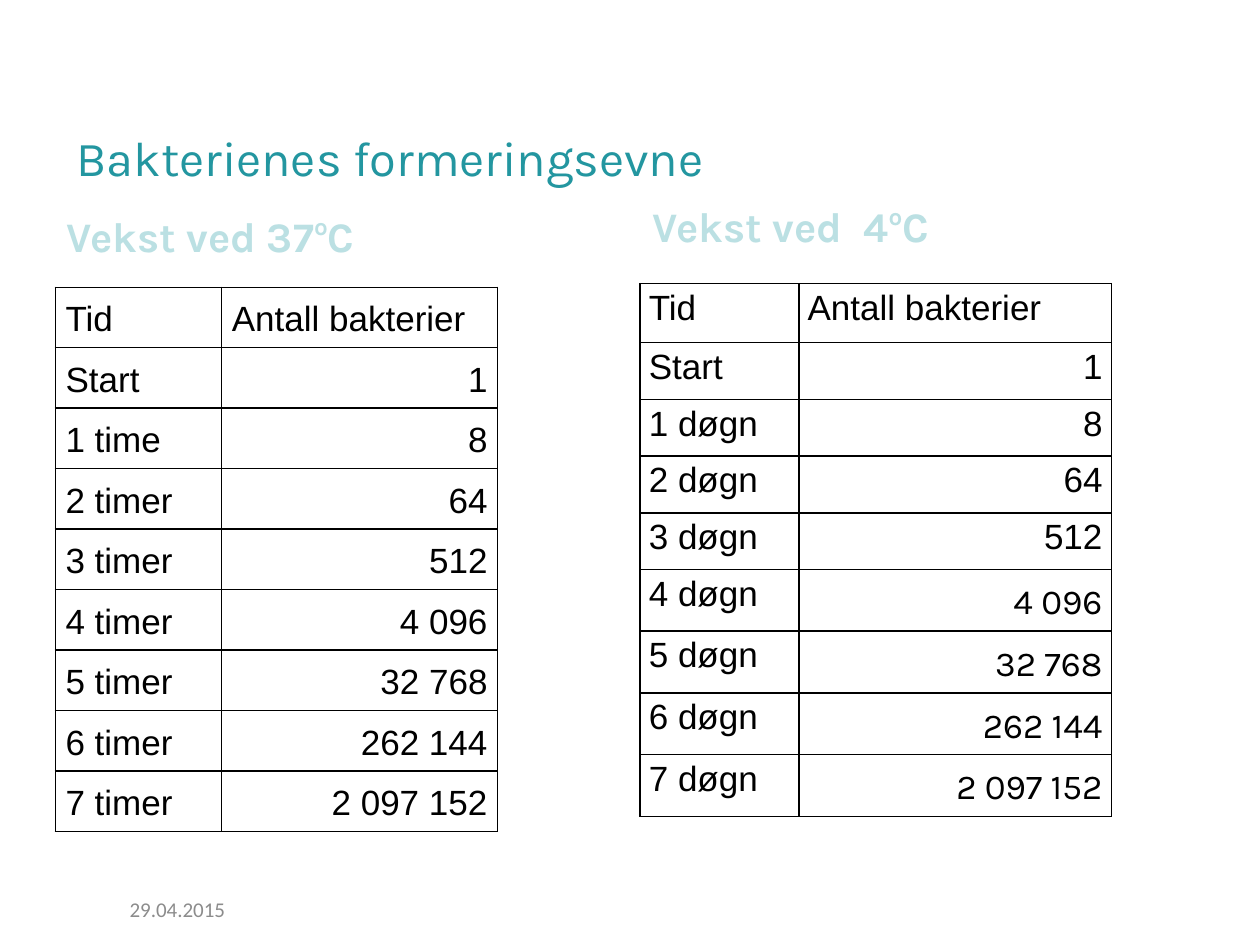
from lxml import etree
from pptx import Presentation
from pptx import util as u
from pptx.dml.color import RGBColor
from pptx.enum import text
from pptx.oxml import ns

TEAL = RGBColor(0x23, 0x96, 0xA0)
PALE = RGBColor(0xBB, 0xE0, 0xE3)
GRAY = RGBColor(0x8C, 0x8C, 0x8C)
BLACK = RGBColor(0, 0, 0)
COUNTS = ["1", "8", "64", "512", "4 096", "32 768", "262 144", "2 097 152"]


class Deck:
    head = "Karla"
    body = "Arial"
    cols = 100
    rows = 75

    def __init__(self):
        self.prs = Presentation()
        self.prs.slide_width = u.Inches(10)
        self.prs.slide_height = u.Inches(7.5)
        self.slide = self.prs.slides.add_slide(self.prs.slide_layouts[6])

    def x(self, n):
        return round(self.prs.slide_width * n / self.cols)

    def y(self, n):
        return round(self.prs.slide_height * n / self.rows)

    def font(self, run, size, face, color, bold=False):
        run.font.size = u.Pt(size)
        run.font.name = face
        run.font.color.rgb = color
        run.font.bold = bold

    def label(self, parts, box, size, face, color, anchor, bold=False, base=0.5):
        left, top, wide, high = box
        shape = self.slide.shapes.add_textbox(
            self.x(left), self.y(top), self.x(wide), self.y(high))
        frame = shape.text_frame
        frame.word_wrap = True
        frame.vertical_anchor = anchor
        frame.margin_bottom = self.y(base)
        for part in parts:
            run = frame.paragraphs[0].add_run()
            run.text = part
            self.font(run, size, face, color, bold)
        return frame.paragraphs[0]

    def title(self, words, box):
        self.label([words], box, 27.9, self.head, TEAL,
                   text.MSO_ANCHOR.BOTTOM, base=0)

    def heading(self, words, box):
        para = self.label([words, "o", "C"], box, 24, self.head, PALE,
                          text.MSO_ANCHOR.BOTTOM, bold=True)
        para.runs[1]._r.get_or_add_rPr().set("baseline", "40000")

    def date(self, words, box):
        self.label([words], box, 12, "Calibri", GRAY, text.MSO_ANCHOR.MIDDLE)

    def border(self, cell):
        props = cell._tc.get_or_add_tcPr()
        for side in ("a:lnL", "a:lnR", "a:lnT", "a:lnB"):
            line = etree.SubElement(props, ns.qn(side), w=str(u.Pt(1)))
            fill = etree.SubElement(line, ns.qn("a:solidFill"))
            etree.SubElement(fill, ns.qn("a:srgbClr"), val=str(BLACK))

    def cell(self, cell, words, inset, right, loose, face):
        self.border(cell)
        cell.fill.background()
        cell.margin_left = cell.margin_right = self.x(inset)
        cell.margin_top = cell.margin_bottom = self.y(0.4)
        cell.text_frame.text = words
        para = cell.text_frame.paragraphs[0]
        para.alignment = text.PP_ALIGN.RIGHT if right else text.PP_ALIGN.LEFT
        if loose:
            para.line_spacing = 1.2
        self.font(para.runs[0], 20, face, BLACK)

    def table(self, times, spot, wides, highs, inset, loose, alt):
        data = [("Tid", "Antall bakterier"), *zip(["Start", *times], COUNTS)]
        left, top = spot
        grid = self.slide.shapes.add_table(
            len(data), 2, self.x(left), self.y(top),
            self.x(sum(wides)), self.y(sum(highs))).table
        grid.first_row = grid.horz_banding = False
        for col, wide in zip(grid.columns, wides):
            col.width = self.x(wide)
        for r, (row, high) in enumerate(zip(data, highs)):
            grid.rows[r].height = self.y(high)
            for c, words in enumerate(row):
                late = alt and c == 1 and r > 4
                self.cell(grid.cell(r, c), words, inset, c == 1 and r > 0,
                          loose or late, self.head if late else self.body)


def main():
    deck = Deck()
    deck.title("Bakterienes formeringsevne", (5.1, 6.8, 90, 8))
    deck.heading("Vekst ved 37", (4.3, 13.9, 42.3, 7.3))
    hours = ["1 time"] + [f"{n} timer" for n in range(2, 8)]
    deck.table(hours, (4.4, 22.8), (13.2, 21.9), [4.7] * 9, 0.8, True, False)
    deck.heading("Vekst ved  4", (50.8, 13.1, 42.5, 7.3))
    days = [f"{n} døgn" for n in range(1, 8)]
    deck.table(days, (50.8, 22.5), (12.6, 24.8),
               [4.7] + [4.5] * 4 + [4.9] * 4, 0.7, False, True)
    deck.date("29.04.2015", (9.3, 70.6, 23.3, 3.1))
    deck.prs.save("out.pptx")


if __name__ == "__main__":
    main()
